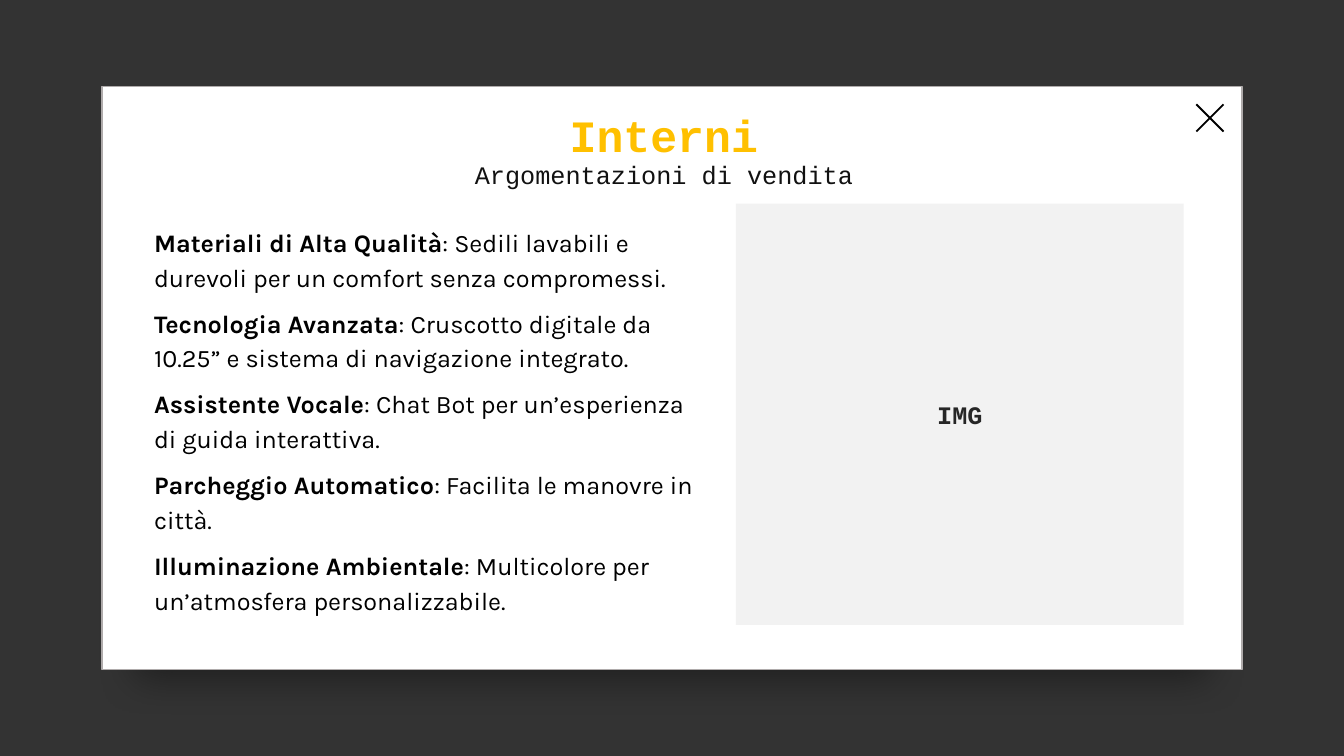
from lxml import etree
from pptx import Presentation
from pptx import util as u
from pptx.dml.color import RGBColor
from pptx.enum import shapes, text
from pptx.oxml import parse_xml
from pptx.oxml.ns import nsdecls, qn

SCALE = 9144
WIDTH, HEIGHT = 1333, 750
COLORS = {
    "black": "000000",
    "white": "FFFFFF",
    "border": "AFABAB",
    "placeholder": "F2F2F2",
    "label": "262626",
    "accent": "FFC000",
    "subtitle": "111111",
}
MONO, SANS = "Courier New", "Karla"
ARGUMENTS = [
    ("Materiali di Alta Qualità", "Sedili lavabili e durevoli per un comfort senza compromessi."),
    ("Tecnologia Avanzata", "Cruscotto digitale da 10.25” e sistema di navigazione integrato."),
    ("Assistente Vocale", "Chat Bot per un’esperienza di guida interattiva."),
    ("Parcheggio Automatico", "Facilita le manovre in città."),
    ("Illuminazione Ambientale", "Multicolore per un’atmosfera personalizzabile."),
]


def px(*lengths):
    """Turn px lengths into EMU."""
    return [u.Emu(length * SCALE) for length in lengths]


def color(name):
    """Return the named colour."""
    return RGBColor.from_string(COLORS[name])


def add_span(para, words, size=18, font=SANS, ink="black", bold=False):
    """Add formatted text to a paragraph."""
    span = para.add_run()
    span.text = words
    span.font.size = u.Pt(size)
    span.font.name = font
    span.font.bold = bold
    span.font.color.rgb = color(ink)


def add_block(page, kind, box, fill):
    """Add a flat filled shape without line or shadow."""
    block = page.shapes.add_shape(kind, *px(*box))
    block.shadow.inherit = False
    block.fill.solid()
    block.fill.fore_color.rgb = color(fill)
    block.line.fill.background()
    return block


def add_backdrop(page, box):
    """Dim the page with a translucent black layer."""
    backdrop = add_block(page, shapes.MSO_SHAPE.RECTANGLE, box, "black")
    tint = next(backdrop.fill._xPr.iter(qn("a:srgbClr")))
    etree.SubElement(tint, qn("a:alpha"), val="80000")


def add_card(page, box):
    """Add the white card, its soft shadow and the close mark."""
    left, top, width, _ = box
    card = add_block(page, shapes.MSO_SHAPE.RECTANGLE, box, "white")
    card.line.color.rgb = color("border")
    card.line.width = u.Pt(1)
    effects = card._element.spPr.find(qn("a:effectLst"))
    effects.append(parse_xml(
        f'<a:outerShdw {nsdecls("a")} blurRad="{u.Pt(29)}" dist="{u.Pt(31)}" dir="5400000" '
        'sx="94000" sy="94000" algn="t" rotWithShape="0">'
        f'<a:srgbClr val="{COLORS["black"]}"><a:alpha val="40000"/></a:srgbClr></a:outerShdw>'))
    side = 52
    close_box = (left + width - side - 6, top + 5, side, side)
    close = add_block(page, shapes.MSO_SHAPE.MATH_MULTIPLY, close_box, "black")
    close.adjustments[0] = 0.034


def add_arguments(page, box):
    """List the sales arguments, each with a bold lead."""
    frame = page.shapes.add_textbox(*px(*box)).text_frame
    frame.word_wrap = True
    frame.auto_size = text.MSO_AUTO_SIZE.SHAPE_TO_FIT_TEXT
    for index, (lead, detail) in enumerate(ARGUMENTS):
        para = frame.add_paragraph() if index else frame.paragraphs[0]
        para.line_spacing = 1.15
        para.space_after = u.Pt(8)
        add_span(para, lead, bold=True)
        add_span(para, f": {detail}")


def add_image_area(page, box):
    """Add the grey area labelled for an image."""
    area = add_block(page, shapes.MSO_SHAPE.RECTANGLE, box, "placeholder")
    area.text_frame.vertical_anchor = text.MSO_ANCHOR.MIDDLE
    para = area.text_frame.paragraphs[0]
    para.alignment = text.PP_ALIGN.CENTER
    add_span(para, "IMG", font=MONO, ink="label", bold=True)


def add_heading(page, box):
    """Place the title and subtitle in front of the card."""
    title = page.shapes.title
    page.shapes._spTree.append(title._element)
    title.left, title.top, title.width, title.height = px(*box)
    frame = title.text_frame
    frame.word_wrap = True
    frame.auto_size = text.MSO_AUTO_SIZE.NONE
    frame.vertical_anchor = text.MSO_ANCHOR.TOP
    frame.margin_left, frame.margin_top, frame.margin_right, frame.margin_bottom = px(8, 4, 8, 4)
    heading, subtitle = frame.paragraphs[0], frame.add_paragraph()
    for para in (heading, subtitle):
        para.alignment = text.PP_ALIGN.CENTER
        para.line_spacing = 0.9
        para.space_before = u.Pt(0)
    add_span(heading, "Interni", size=32, font=MONO, ink="accent", bold=True)
    add_span(subtitle, "Argomentazioni di vendita", font=MONO, ink="subtitle")


def build_popup(page, box):
    """Lay out the pop-up card inside its box."""
    left, top, width, height = box
    add_card(page, box)
    add_arguments(page, (left + 42, top + 130, 560, 402))
    add_image_area(page, (left + 629, top + 116, 444, 418))
    add_heading(page, (left + 227, top + 23, 661, 110))


def main():
    """Build and save the deck."""
    deck = Presentation()
    deck.slide_width, deck.slide_height = px(WIDTH, HEIGHT)
    page = deck.slides.add_slide(deck.slide_layouts[5])
    add_backdrop(page, (0, 0, WIDTH, HEIGHT))
    build_popup(page, (101, 86, 1131, 578))
    deck.save("out.pptx")


if __name__ == "__main__":
    main()
